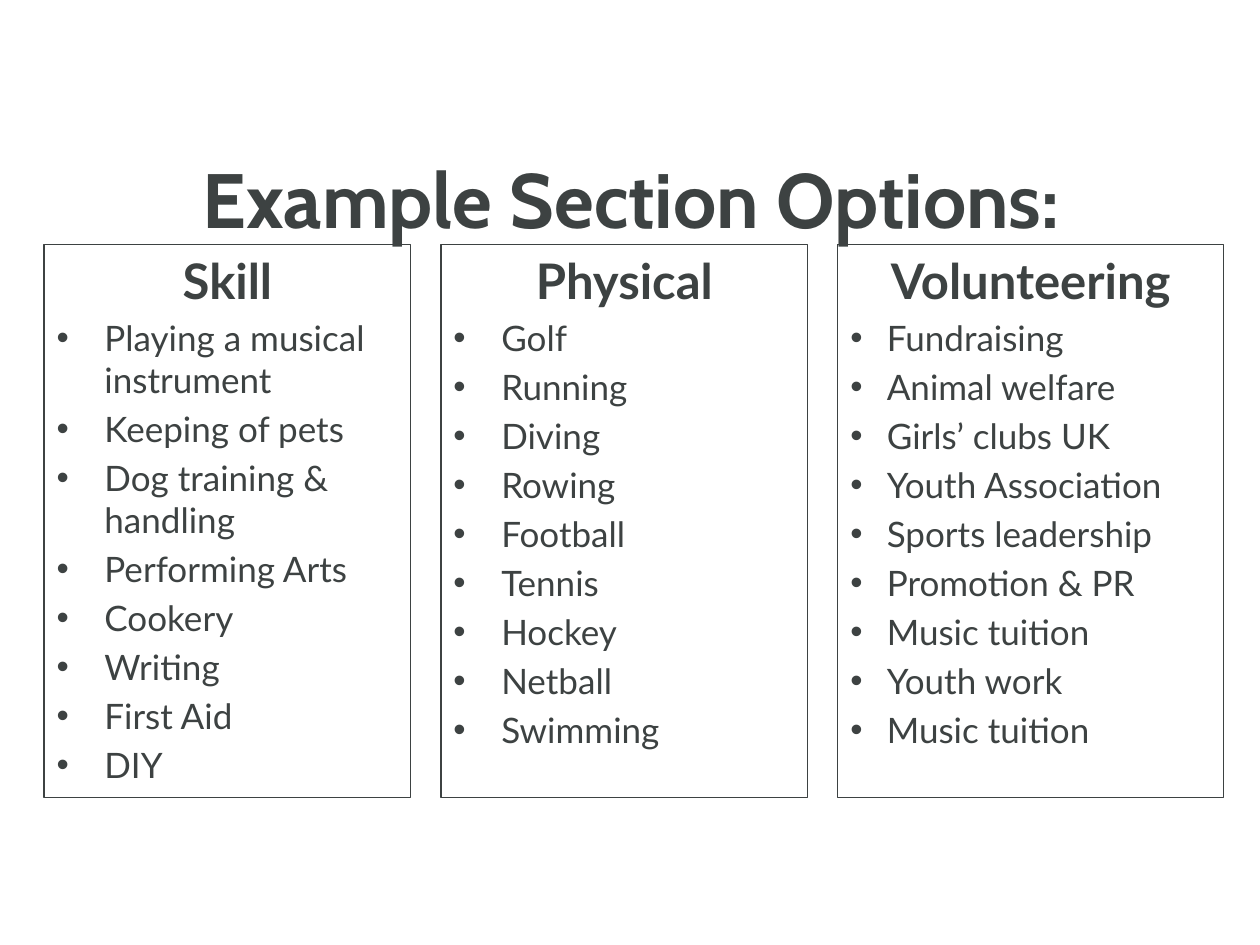
from lxml import etree
from pptx import Presentation
from pptx.dml.color import RGBColor
from pptx.enum.shapes import MSO_SHAPE
from pptx.enum.text import MSO_ANCHOR, PP_ALIGN
from pptx.oxml.ns import qn
from pptx.util import Emu, Inches, Pt

RECTANGLE = MSO_SHAPE.RECTANGLE
TOP = MSO_ANCHOR.TOP
LEFT, CENTER = PP_ALIGN.LEFT, PP_ALIGN.CENTER

INK = "3D4242"
TITLE_FONT, BODY_FONT = "Cabin", "Lato"
TITLE = "Example Section Options:"
SECTIONS = [
    {"heading": "Skill", "width": 2.91, "indent": 0.38, "options": [
        "Playing a musical instrument", "Keeping of pets",
        "Dog training & handling", "Performing Arts", "Cookery", "Writing",
        "First Aid", "DIY"]},
    {"heading": "Physical", "width": 2.91, "indent": 0.38, "options": [
        "Golf", "Running", "Diving", "Rowing", "Football", "Tennis",
        "Hockey", "Netball", "Swimming"]},
    {"heading": "Volunteering", "width": 3.06, "indent": 0.29, "options": [
        "Fundraising", "Animal welfare", "Girls’ clubs UK",
        "Youth Association", "Sports leadership", "Promotion & PR",
        "Music tuition", "Youth work", "Music tuition"]},
]
COLUMN_LEFT, COLUMN_TOP, COLUMN_HEIGHT, COLUMN_GAP = 0.35, 1.94, 4.39, 0.24


def color(value):
    return RGBColor.from_string(value)


def add_text(frame, text, size, font=BODY_FONT, bold=False, align=LEFT,
             before=0, indent=None):
    first = frame.paragraphs[0]
    paragraph = frame.add_paragraph() if first.runs else first
    paragraph.alignment = align
    paragraph.space_before = Pt(before)
    if indent:
        properties = paragraph._p.get_or_add_pPr()
        properties.set("marL", str(Emu(Inches(indent))))
        properties.set("indent", str(-Emu(Inches(indent))))
        etree.SubElement(properties, qn("a:buFont")).set("typeface", "Arial")
        etree.SubElement(properties, qn("a:buChar")).set("char", "•")
    run = paragraph.add_run()
    run.text = text
    run.font.name = font
    run.font.size = Pt(size)
    run.font.bold = bold
    run.font.color.rgb = color(INK)


def prepare(frame):
    frame.word_wrap = True
    frame.vertical_anchor = TOP
    return frame


def add_section(slide, left, section):
    box = slide.shapes.add_shape(
        RECTANGLE, Inches(left), Inches(COLUMN_TOP),
        Inches(section["width"]), Inches(COLUMN_HEIGHT))
    box.shadow.inherit = False
    box.fill.background()
    box.line.color.rgb = color(INK)
    box.line.width = Pt(0.75)
    frame = prepare(box.text_frame)
    add_text(frame, section["heading"], 28, bold=True, align=CENTER)
    for option in section["options"]:
        add_text(frame, option, 20, before=4, indent=section["indent"])


def main():
    presentation = Presentation()
    presentation.slide_width = Inches(10)
    presentation.slide_height = Inches(7.5)
    slide = presentation.slides.add_slide(presentation.slide_layouts[6])

    title = slide.shapes.add_textbox(
        Inches(0.51), Inches(1.15), Inches(9), Inches(1.25))
    add_text(prepare(title.text_frame), TITLE, 44, font=TITLE_FONT,
             bold=True, align=CENTER)

    left = COLUMN_LEFT
    for section in SECTIONS:
        add_section(slide, left, section)
        left += section["width"] + COLUMN_GAP

    presentation.save("out.pptx")


if __name__ == "__main__":
    main()
